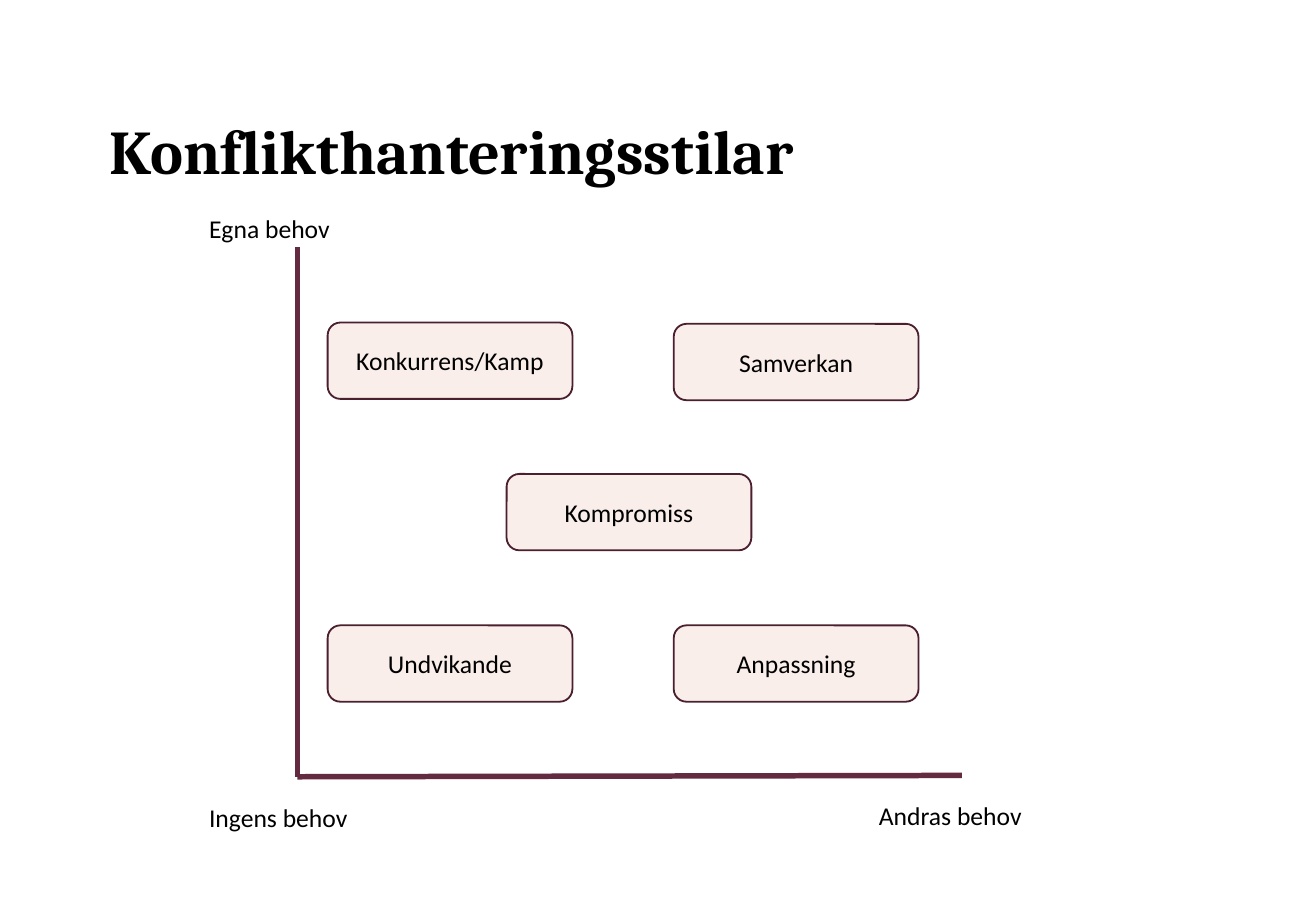
"""Build a slide that maps conflict styles by own needs and the needs of others."""
from lxml.etree import SubElement
from pptx import Presentation
from pptx.dml.color import RGBColor
from pptx.enum.shapes import MSO_CONNECTOR, MSO_SHAPE
from pptx.enum.text import MSO_ANCHOR, MSO_AUTO_SIZE, PP_ALIGN
from pptx.oxml.ns import qn
from pptx.util import Inches, Pt

BLACK = RGBColor(0x00, 0x00, 0x00)
PLUM = RGBColor(0x64, 0x2A, 0x3F)
DARK_PLUM = RGBColor(0x4A, 0x1F, 0x2F)
BLUSH = RGBColor(0xF9, 0xEE, 0xE9)

TITLE = "Konflikthanteringsstilar"
STYLES = [
    ("Konkurrens/Kamp", 2.49, 2.45),
    ("Samverkan", 5.12, 2.46),
    ("Kompromiss", 3.85, 3.6),
    ("Undvikande", 2.49, 4.75),
    ("Anpassning", 5.12, 4.75),
]
AXES = [(2.26, 1.88, 2.26, 5.9), (7.31, 5.89, 2.26, 5.9)]
AXIS_LABELS = [
    ("Andras behov", 6.58, 6.03),
    ("Ingens behov", 1.49, 6.04),
    ("Egna behov", 1.49, 1.57),
]
STYLE_SIZE = (1.86, 0.58)
LABEL_SIZE = (1.76, 0.34)


def write(frame, text, font_name, size, align=PP_ALIGN.LEFT):
    """Put one formatted paragraph into a text frame."""
    frame.word_wrap = True
    para = frame.paragraphs[0]
    para.text = text
    para.alignment = align
    para.font.name = font_name
    para.font.size = Pt(size)
    para.font.color.rgb = BLACK
    return para


def add_title(page):
    """Fill and place the title placeholder."""
    title = page.shapes.title
    title.left, title.top = Inches(0.83), Inches(0.75)
    title.width, title.height = Inches(8.35), Inches(0.68)
    frame = title.text_frame
    frame.margin_left = frame.margin_right = 0
    frame.margin_top = frame.margin_bottom = 0
    frame.vertical_anchor = MSO_ANCHOR.BOTTOM
    frame.auto_size = MSO_AUTO_SIZE.NONE
    para = write(frame, TITLE, "Cambria", 34)
    para.font.bold = True
    para.line_spacing = 0.9


def add_axis(page, ends):
    """Draw one axis line."""
    axis = page.shapes.add_connector(MSO_CONNECTOR.STRAIGHT, *map(Inches, ends))
    axis.line.color.rgb = PLUM
    axis.line.width = Pt(3)
    SubElement(axis.element.spPr, qn("a:effectLst"))


def add_style(page, text, left, top):
    """Draw one rounded box that names a style."""
    box = page.shapes.add_shape(
        MSO_SHAPE.ROUNDED_RECTANGLE, *map(Inches, (left, top, *STYLE_SIZE)))
    box.shadow.inherit = False
    box.fill.solid()
    box.fill.fore_color.rgb = BLUSH
    box.line.color.rgb = DARK_PLUM
    box.line.width = Pt(1)
    box.text_frame.vertical_anchor = MSO_ANCHOR.MIDDLE
    write(box.text_frame, text, "Calibri", 14, PP_ALIGN.CENTER)


def add_label(page, text, left, top):
    """Write one label at the end of an axis."""
    box = page.shapes.add_textbox(*map(Inches, (left, top, *LABEL_SIZE)))
    box.text_frame.auto_size = MSO_AUTO_SIZE.SHAPE_TO_FIT_TEXT
    write(box.text_frame, text, "Calibri", 14)


def main():
    """Assemble and save the deck."""
    deck = Presentation()
    deck.slide_width, deck.slide_height = Inches(10), Inches(6.95)
    page = deck.slides.add_slide(deck.slide_layouts[5])
    add_title(page)
    for ends in AXES:
        add_axis(page, ends)
    for style in STYLES:
        add_style(page, *style)
    for label in AXIS_LABELS:
        add_label(page, *label)
    deck.save("out.pptx")


if __name__ == "__main__":
    main()
